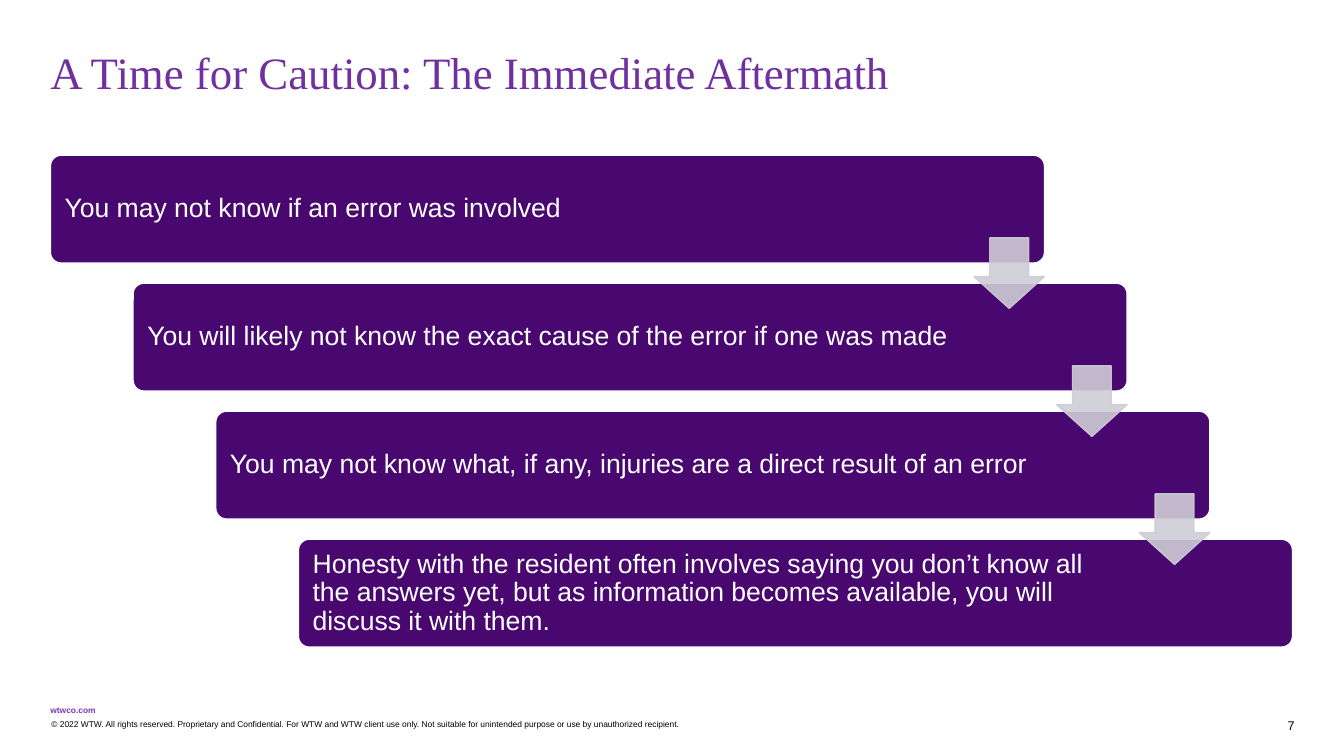
from dataclasses import dataclass

from lxml import etree
from pptx import Presentation
from pptx.dml.color import RGBColor
from pptx.enum.shapes import MSO_SHAPE
from pptx.enum.text import MSO_ANCHOR, MSO_AUTO_SIZE, PP_ALIGN
from pptx.oxml.ns import qn
from pptx.util import Inches, Pt

ROUNDED = MSO_SHAPE.ROUNDED_RECTANGLE
DOWN_ARROW = MSO_SHAPE.DOWN_ARROW
LEFT, RIGHT = PP_ALIGN.LEFT, PP_ALIGN.RIGHT
TOP, MIDDLE, BOTTOM = MSO_ANCHOR.TOP, MSO_ANCHOR.MIDDLE, MSO_ANCHOR.BOTTOM

PURPLE, TITLE_PURPLE, LINK_PURPLE = "48086F", "7030A0", "7F35B2"
GREY, WHITE, BLACK = "CFCCD5", "FFFFFF", "000000"
TITLE_ONLY_LAYOUT = 5

# Staircase geometry, in inches
STEP_X, STEP_Y = 0.82, 1.27
CARD_LEFT, CARD_TOP, CARD_WIDTH, CARD_HEIGHT = 0.5, 1.54, 9.86, 1.07
ARROW_LEFT, ARROW_TOP, ARROW_SIZE = 9.66, 2.36, 0.7
CARD_INSETS = (0.11, 0.11, 1.64, 0.11)

STEPS = [
    "You may not know if an error was involved",
    "You will likely not know the exact cause of the error if one was made",
    "You may not know what, if any, injuries are a direct result of an error",
    "Honesty with the resident often involves saying you don’t know all the "
    "answers yet, but as information becomes available, you will discuss it with them.",
]


@dataclass
class Style:
    size: float
    color: str
    font: str = "Arial"
    bold: bool = False
    align: int = LEFT
    anchor: int = TOP
    line_spacing: float = 1.0
    wrap: bool = True


@dataclass
class Label:
    text: str
    left: float
    top: float
    width: float
    height: float
    style: Style


TITLE_STYLE = Style(32, TITLE_PURPLE, "Times New Roman", line_spacing=0.9)
CARD_STYLE = Style(19, WHITE, anchor=MIDDLE, line_spacing=0.9)

FOOTER = [
    Label("wtwco.com", 0.5, 7, 0.45, 0.1, Style(6, LINK_PURPLE, bold=True, wrap=False)),
    Label("© 2022 WTW. All rights reserved. Proprietary and Confidential. "
          "For WTW and WTW client use only. Not suitable for unintended purpose "
          "or use by unauthorized recipient.", 0.51, 7.13, 6.6, 0.1, Style(6, BLACK)),
    Label("7", 12.5, 7.04, 0.34, 0.23, Style(9, BLACK, align=RIGHT, anchor=BOTTOM)),
]


def rgb(color: str) -> RGBColor:
    return RGBColor.from_string(color)


def write(shape, text: str, style: Style, insets=(0, 0, 0, 0)) -> None:
    frame = shape.text_frame
    frame.auto_size = MSO_AUTO_SIZE.NONE
    frame.word_wrap = style.wrap
    frame.vertical_anchor = style.anchor
    (frame.margin_left, frame.margin_top,
     frame.margin_right, frame.margin_bottom) = map(Inches, insets)
    paragraph = frame.paragraphs[0]
    paragraph.alignment = style.align
    paragraph.line_spacing = style.line_spacing
    run = paragraph.add_run()
    run.text = text
    run.font.name = style.font
    run.font.size = Pt(style.size)
    run.font.bold = style.bold
    run.font.color.rgb = rgb(style.color)


def add_box(slide, kind: int, left: float, top: float, width: float, height: float,
            adjustments: list[float], fill: str, line: str):
    shape = slide.shapes.add_shape(
        kind, Inches(left), Inches(top), Inches(width), Inches(height))
    shape.shadow.inherit = False
    for index, value in enumerate(adjustments):
        shape.adjustments[index] = value
    shape.fill.solid()
    shape.fill.fore_color.rgb = rgb(fill)
    shape.line.color.rgb = rgb(line)
    shape.line.width = Pt(1)
    return shape


def set_opacity(shape, percent: int) -> None:
    for color in shape.element.spPr.iter(qn("a:srgbClr")):
        etree.SubElement(color, qn("a:alpha"), val=str(percent * 1000))


def add_label(slide, label: Label) -> None:
    box = slide.shapes.add_textbox(Inches(label.left), Inches(label.top),
                                   Inches(label.width), Inches(label.height))
    write(box, label.text, label.style)


def main() -> None:
    presentation = Presentation()
    presentation.slide_width = Inches(13.33)
    presentation.slide_height = Inches(7.5)
    slide = presentation.slides.add_slide(presentation.slide_layouts[TITLE_ONLY_LAYOUT])

    # Title
    title = slide.shapes.title
    title.left, title.top = Inches(0.5), Inches(0.5)
    title.width, title.height = Inches(12.17), Inches(1.25)
    write(title, "A Time for Caution: The Immediate Aftermath", TITLE_STYLE)

    # Footer
    for label in FOOTER:
        add_label(slide, label)

    # Descending cards
    for index, text in enumerate(STEPS):
        card = add_box(slide, ROUNDED, CARD_LEFT + index * STEP_X,
                       CARD_TOP + index * STEP_Y, CARD_WIDTH, CARD_HEIGHT,
                       [0.1], PURPLE, WHITE)
        write(card, text, CARD_STYLE, CARD_INSETS)

    # Arrows from each card to the next
    for index in range(len(STEPS) - 1):
        arrow = add_box(slide, DOWN_ARROW, ARROW_LEFT + index * STEP_X,
                        ARROW_TOP + index * STEP_Y, ARROW_SIZE, ARROW_SIZE,
                        [0.55, 0.45], GREY, GREY)
        set_opacity(arrow, 90)

    presentation.save("out.pptx")


if __name__ == "__main__":
    main()
